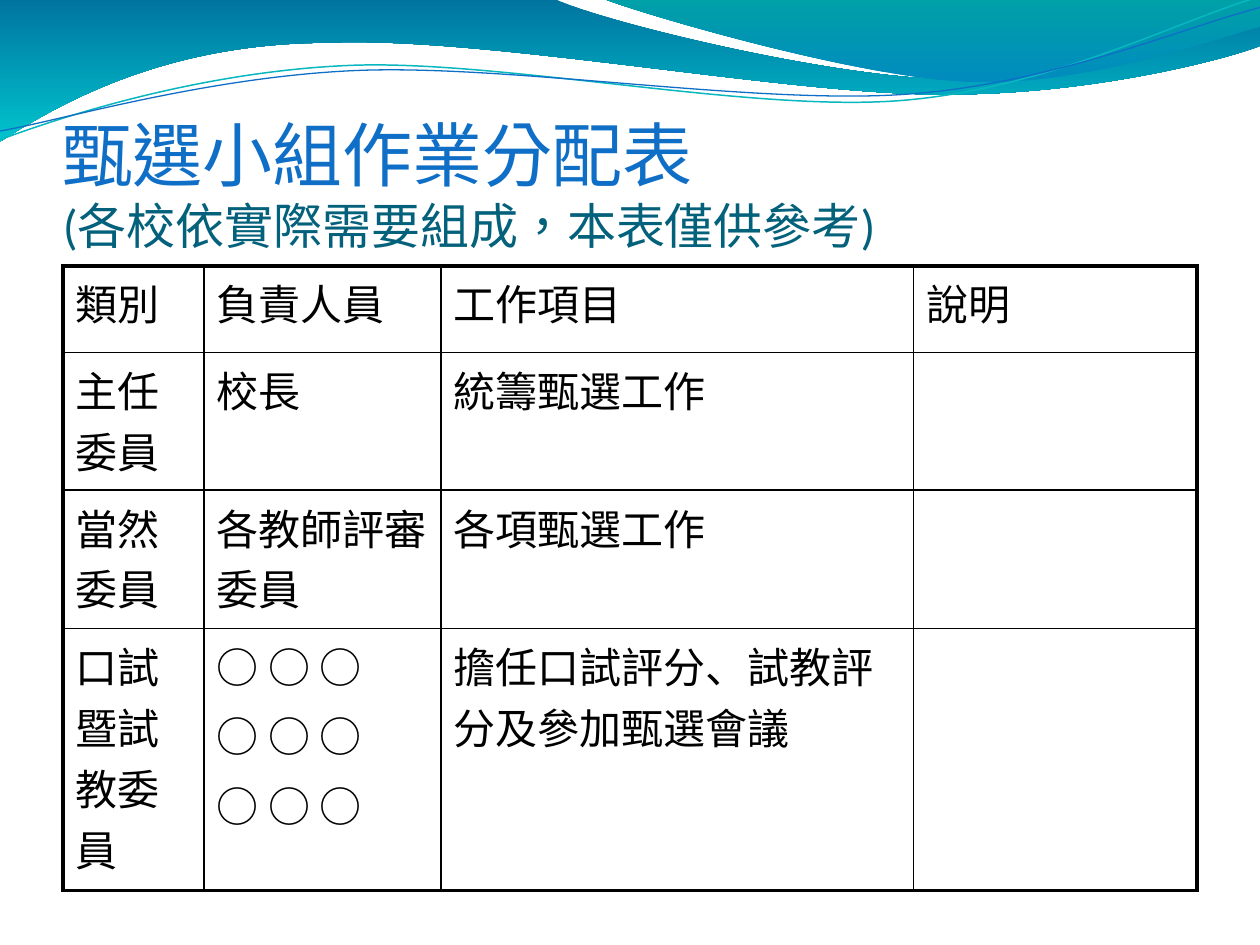
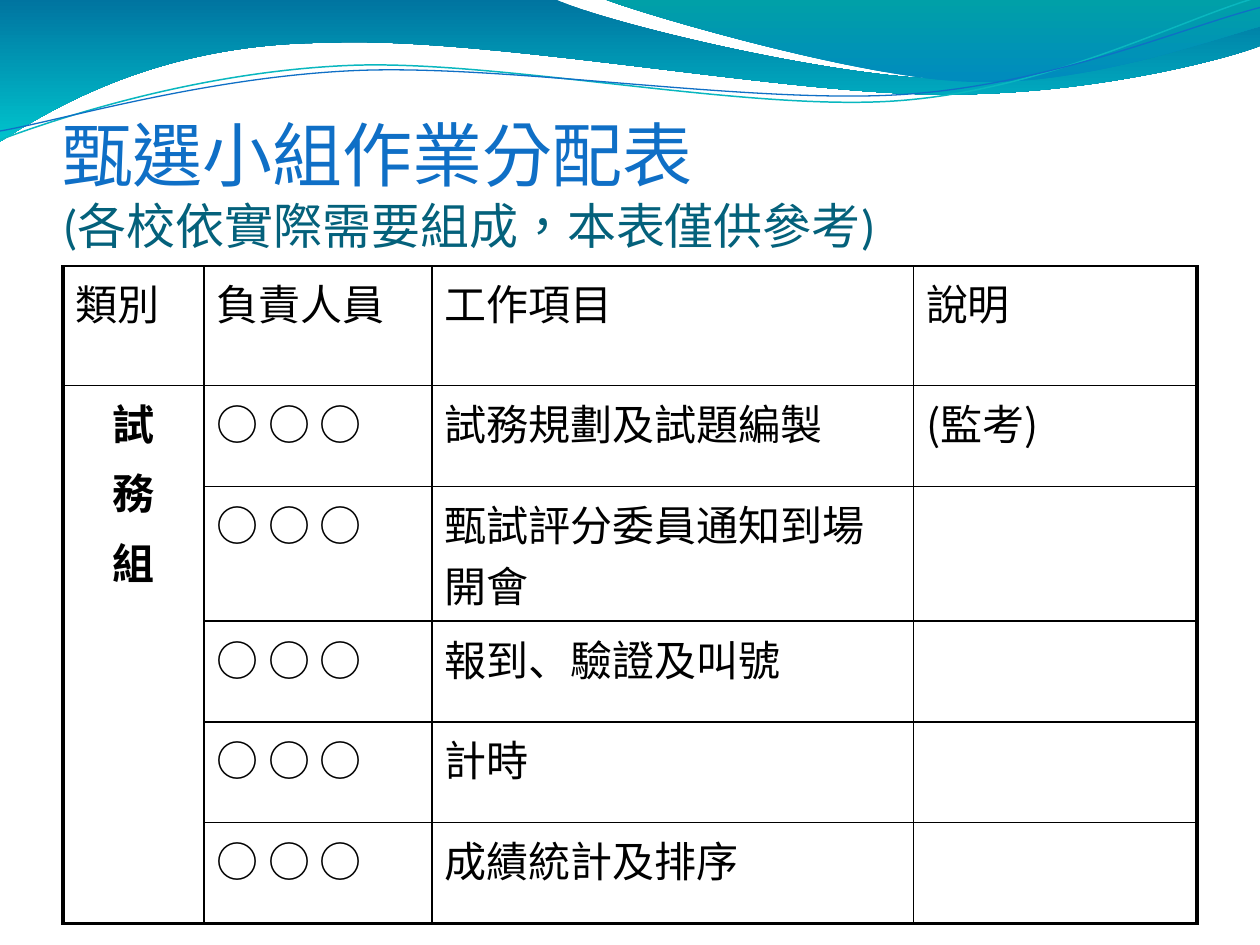
"""Build two slides showing how a selection committee divides its work."""
import pptx
import pptx.dml.color
import pptx.enum.lang
import pptx.enum.text
import pptx.oxml
import pptx.oxml.ns
import pptx.util

Inches = pptx.util.Inches
Pt = pptx.util.Pt
RGBColor = pptx.dml.color.RGBColor
qn = pptx.oxml.ns.qn

BLACK = RGBColor(0x00, 0x00, 0x00)
TITLE_BLUE = RGBColor(0x0F, 0x6F, 0xC6)
SUBTITLE_TEAL = RGBColor(0x04, 0x61, 0x7B)
LINE_TEAL = RGBColor(0x09, 0xB7, 0xBF)
WAVE_DEEP, WAVE_BRIGHT = RGBColor(0x00, 0x74, 0xA0), RGBColor(0x00, 0xC4, 0xCD)
CREST_BLUE, CREST_TEAL = RGBColor(0x00, 0x8A, 0xBF), RGBColor(0x00, 0xA0, 0xA8)

CJK_FONT = "Noto Sans CJK SC"
TITLE_BASE = {"name": "Calibri", "language_id": pptx.enum.lang.MSO_LANGUAGE_ID.from_xml("zh-TW")}
TITLE_LINES = [
    ("甄選小組作業分配表", TITLE_BASE | {"size": Pt(40), "color": TITLE_BLUE}),
    ("(各校依實際需要組成，本表僅供參考)", TITLE_BASE | {"size": Pt(28), "color": SUBTITLE_TEAL}),
]
CELL_FORMAT = {"size": Pt(24), "name": CJK_FONT, "color": BLACK, "bold": False}
GROUP_FORMAT = CELL_FORMAT | {"bold": True}

THIN, THICK = 0.96, 2.21
TABLE_LEFT, TABLE_TOP = 0.5, 2.11
HEADINGS = ["類別", "負責人員", "工作項目", "說明"]
STAFF = "○ ○ ○"
TABLES = [
    {
        "columns": [1.12, 1.88, 3.75, 2.25],
        "heights": [0.69, 1.09, 1.1, 2.08],
        "top_border": THICK,
        "group": None,
        "rows": [
            ["主任委員", "校長", "統籌甄選工作", ""],
            ["當然委員", "各教師評審委員", "各項甄選工作", ""],
            ["口試暨試教委員", "\n".join([STAFF] * 3), "擔任口試評分、試教評分及參加甄選會議", ""],
        ],
    },
    {
        "columns": [1.12, 1.81, 3.82, 2.25],
        "heights": [0.95, 0.8, 1.07, 0.8, 0.8, 0.8],
        "top_border": THIN,
        "group": "試\n務\n組",
        "rows": [
            ["", STAFF, "試務規劃及試題編製", "(監考)"],
            ["", STAFF, "甄試評分委員通知到場開會", ""],
            ["", STAFF, "報到、驗證及叫號", ""],
            ["", STAFF, "計時", ""],
            ["", STAFF, "成績統計及排序", ""],
        ],
    },
]

WAVES = [
    {
        "start": (0, -0.01),
        "segments": [[(4.4, -0.01)],
                     [(4.76, 0.17), (6.64, 0.63), (7.58, 0.63)],
                     [(8.53, 0.63), (9.58, 0.26), (10, 0.09)],
                     [(10.01, 0.36)],
                     [(9.83, 0.44), (8.7, 0.76), (7.46, 0.75)],
                     [(6.22, 0.75), (3.82, 0.28), (2.57, 0.34)],
                     [(1.29, 0.35), (0.46, 0.83), (-0.01, 1.13)],
                     [(0, -0.01)]],
        "colors": [WAVE_DEEP, WAVE_BRIGHT], "angle": 270,
    },
    {
        "start": (4.79, -0.01),
        "segments": [[(5.09, 0.11), (6.82, 0.62), (7.69, 0.65)],
                     [(8.56, 0.69), (9.61, 0.32), (10, 0.21)],
                     [(10, 0)],
                     [(4.79, -0.01)]],
        "colors": [CREST_BLUE, CREST_TEAL], "angle": 90,
    },
]
RIPPLES = [
    {
        "start": (0, 1.11),
        "segments": [[(0.48, 0.93), (1.58, 0.57), (2.77, 0.52)],
                     [(3.95, 0.47), (5.93, 0.89), (7.13, 0.8)],
                     [(8.33, 0.71), (9.38, 0.15), (9.98, -0.02)]],
        "color": LINE_TEAL, "width": 0.85,
    },
    {
        "start": (0, 1.04),
        "segments": [[(0.47, 0.96), (1.64, 0.61), (2.83, 0.56)],
                     [(4.03, 0.51), (5.97, 0.83), (7.17, 0.75)],
                     [(8.36, 0.67), (9.41, 0.21), (10, 0.06)]],
        "color": TITLE_BLUE, "width": 0.75,
    },
]


def add_outline(page, outline, close):
    """Add a freeform whose three-point segments are cubic curves."""
    points = [(Inches(x), Inches(y)) for segment in outline["segments"] for x, y in segment]
    builder = page.shapes.build_freeform(*map(Inches, outline["start"]), scale=1.0)
    builder.add_line_segments(points, close=close)
    shape = builder.convert_to_shape()
    shape.shadow.inherit = False
    steps = iter(list(shape._element.iter(qn("a:lnTo"))))
    for segment in outline["segments"]:
        corners = [next(steps) for _ in segment]
        if len(corners) == 3:
            curve = pptx.oxml.parse_xml(f'<a:cubicBezTo {pptx.oxml.ns.nsdecls("a")}/>')
            corners[0].addprevious(curve)
            for corner in corners:
                curve.append(corner[0])
                corner.getparent().remove(corner)
    return shape


def add_waves(page):
    """Draw the wave band along the top edge."""
    for wave in WAVES:
        shape = add_outline(page, wave, True)
        shape.line.fill.background()
        shape.fill.gradient()
        shape.fill.gradient_angle = wave["angle"]
        for stop, color in zip(shape.fill.gradient_stops, wave["colors"]):
            stop.color.rgb = color
    for ripple in RIPPLES:
        shape = add_outline(page, ripple, False)
        shape.fill.background()
        shape.line.color.rgb = ripple["color"]
        shape.line.width = Pt(ripple["width"])


def add_span(para, text, format_values):
    """Add a formatted run, with the East Asian font set as well."""
    span = para.add_run()
    span.text = text
    for name, value in format_values.items():
        if name == "color":
            span.font.color.rgb = value
        else:
            setattr(span.font, name, value)
    east_asian = pptx.oxml.parse_xml(
        f'<a:ea {pptx.oxml.ns.nsdecls("a")} typeface="{CJK_FONT}"/>')
    span.font._element.find(qn("a:latin")).addnext(east_asian)


def add_title(page):
    """Add the two-line title."""
    box = page.shapes.add_textbox(Inches(0.5), Inches(0.77), Inches(9), Inches(1.25))
    frame = box.text_frame
    settings = {"word_wrap": True, "vertical_anchor": pptx.enum.text.MSO_ANCHOR.BOTTOM,
                "margin_left": 0, "margin_right": 0, "margin_top": Inches(0.05), "margin_bottom": 0}
    for name, value in settings.items():
        setattr(frame, name, value)
    para = frame.paragraphs[0]
    for index, (text, format_values) in enumerate(TITLE_LINES):
        if index:
            para.add_line_break()
        add_span(para, text, format_values)


def set_borders(cell, widths):
    """Draw black borders; widths run left, right, top, bottom."""
    properties = cell._tc.get_or_add_tcPr()
    for side, width in zip("LRTB", widths):
        properties.append(pptx.oxml.parse_xml(
            f'<a:ln{side} {pptx.oxml.ns.nsdecls("a")} w="{Pt(width)}">'
            f'<a:solidFill><a:srgbClr val="{BLACK}"/></a:solidFill></a:ln{side}>'))


def fill_cell(cell, text, format_values, alignment):
    """Write one paragraph per line of text."""
    frame = cell.text_frame
    for index, line in enumerate(text.split("\n")):
        para = frame.add_paragraph() if index else frame.paragraphs[0]
        para.alignment = alignment
        if index:
            para.space_before = Pt(4.8)
        if line:
            add_span(para, line, format_values)


def add_duty_table(page, duty):
    """Add one duty table with a heavy outer frame."""
    rows = [HEADINGS, *duty["rows"]]
    last_row, last_column = len(rows) - 1, len(HEADINGS) - 1
    table = page.shapes.add_table(
        len(rows), len(HEADINGS), Inches(TABLE_LEFT), Inches(TABLE_TOP),
        Inches(sum(duty["columns"])), Inches(sum(duty["heights"]))).table
    table.first_row = table.horz_banding = False
    for column, width in zip(table.columns, duty["columns"]):
        column.width = Inches(width)
    for row, height in zip(table.rows, duty["heights"]):
        row.height = Inches(height)
    if duty["group"]:
        table.cell(1, 0).merge(table.cell(last_row, 0))
    for r, texts in enumerate(rows):
        for c, text in enumerate(texts):
            cell = table.cell(r, c)
            bottom_row = r + cell.span_height - 1 if cell.is_merge_origin else r
            set_borders(cell, [THICK if c == 0 else THIN,
                               THICK if c == last_column else THIN,
                               duty["top_border"] if r == 0 else THIN,
                               THICK if bottom_row == last_row else THIN])
            cell.fill.background()
            if cell.is_merge_origin:
                fill_cell(cell, duty["group"], GROUP_FORMAT, pptx.enum.text.PP_ALIGN.CENTER)
            else:
                fill_cell(cell, text, CELL_FORMAT, pptx.enum.text.PP_ALIGN.LEFT)


def main():
    """Build and save the deck."""
    deck = pptx.Presentation()
    deck.slide_width, deck.slide_height = Inches(10), Inches(7.5)
    for duty in TABLES:
        page = deck.slides.add_slide(deck.slide_layouts[6])
        add_waves(page)
        add_title(page)
        add_duty_table(page, duty)
    deck.save("out.pptx")


if __name__ == "__main__":
    main()
